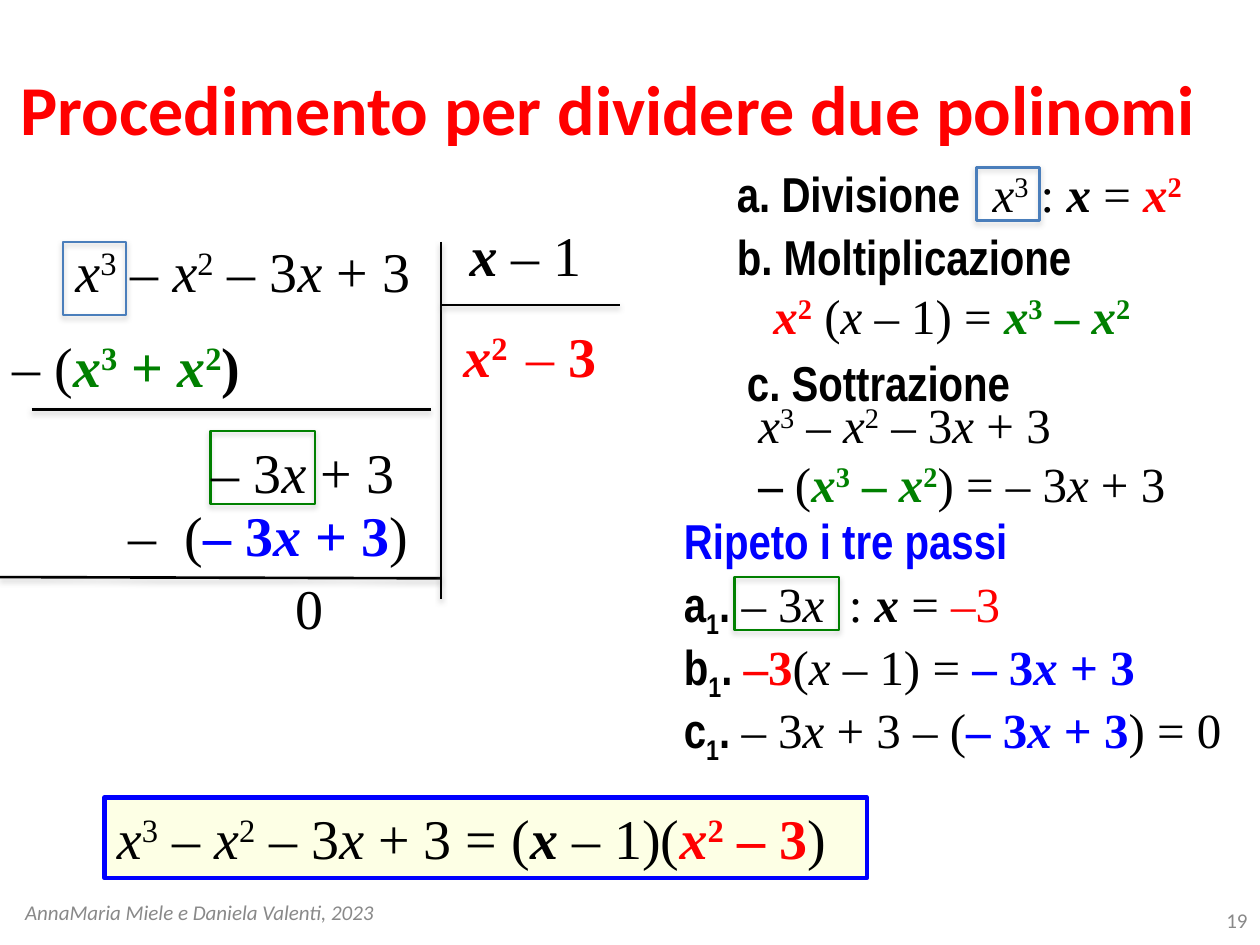
import itertools
from dataclasses import dataclass
from typing import Optional

import pptx
import pptx.dml.color
import pptx.enum.shapes
import pptx.enum.text
import pptx.oxml
import pptx.oxml.ns
import pptx.util
from pptx.util import Inches

ALIGN = pptx.enum.text.PP_ALIGN
ANCHOR = pptx.enum.text.MSO_ANCHOR


@dataclass(frozen=True)
class Theme:
    black: str = "000000"
    red: str = "FF0000"
    green: str = "008000"
    blue: str = "0000FF"
    steel: str = "4A7EBB"
    grey: str = "898989"
    cream: str = "FDFFE5"
    sans: str = "Calibri"
    narrow: str = "Arial Narrow"
    serif: str = "Times New Roman"
    title: int = 40
    division: int = 32
    step: int = 28
    footer: int = 12
    rule: float = 1.5
    border: float = 2.5


THEME = Theme()
SUPERSCRIPT, SUBSCRIPT = 30, -25


@dataclass(frozen=True)
class Run:
    text: str
    color: str = THEME.black
    bold: bool = False
    italic: bool = False
    font: str = THEME.serif
    baseline: int = 0


@dataclass(frozen=True)
class Label:
    left: float
    top: float
    width: float
    height: float
    size: int
    paragraphs: list[list[Run]]
    align: ALIGN = ALIGN.LEFT
    anchor: ANCHOR = ANCHOR.TOP
    wrap: bool = False
    last_indent: float = 0


@dataclass(frozen=True)
class Frame:
    left: float
    top: float
    width: float
    height: float
    color: str


@dataclass(frozen=True)
class Rule:
    x1: float
    y1: float
    x2: float
    y2: float


def math(text: str, color: str = THEME.black, bold: bool = False) -> list[Run]:
    """Split an expression into runs: x is italic, ^ raises the next character."""
    marked, raised = [], False
    for character in text:
        if character == "^":
            raised = True
            continue
        marked.append((character, character == "x", SUPERSCRIPT if raised else 0))
        raised = False
    return [
        Run("".join(item[0] for item in group), color, bold, italic, baseline=baseline)
        for (italic, baseline), group in itertools.groupby(marked, key=lambda item: item[1:])
    ]


def heading(text: str, color: str = THEME.black) -> list[Run]:
    return [Run(text, color, bold=True, font=THEME.narrow)]


def repeated_step(letter: str) -> list[Run]:
    """Letter with subscript 1, for the second round of the division."""
    index = Run("1", bold=True, font=THEME.narrow, baseline=SUBSCRIPT)
    return heading(letter) + [index] + heading(". ")


def step(top: float, *paragraphs: list[Run], left: float = 5.33, width: float = 4.67,
         last_indent: float = 0) -> Label:
    return Label(left, top, width, 0.57 if len(paragraphs) == 1 else 1.04,
                 THEME.step, list(paragraphs), last_indent=last_indent)


def division(left: float, top: float, width: float, runs: list[Run]) -> Label:
    return Label(left, top, width, 0.64, THEME.division, [runs])


def rgb(color: str) -> pptx.dml.color.RGBColor:
    return pptx.dml.color.RGBColor.from_string(color)


def fill_text(frame, label: Label) -> None:
    frame.word_wrap = label.wrap
    frame.vertical_anchor = label.anchor
    for index, runs in enumerate(label.paragraphs):
        paragraph = frame.paragraphs[0] if index == 0 else frame.add_paragraph()
        paragraph.alignment = label.align
        for item in runs:
            run = paragraph.add_run()
            run.text = item.text
            font = run.font
            font.name, font.size = item.font, pptx.util.Pt(label.size)
            font.bold, font.italic = item.bold, item.italic
            font.color.rgb = rgb(item.color)
            if item.baseline:
                font._element.set("baseline", str(item.baseline * 1000))
    if label.last_indent:
        properties = paragraph._p.get_or_add_pPr()
        properties.set("marL", str(Inches(label.last_indent)))


def add_label(slide, label: Label) -> None:
    box = slide.shapes.add_textbox(*map(Inches, (label.left, label.top, label.width, label.height)))
    fill_text(box.text_frame, label)


def add_shadow(shape, opacity: int) -> None:
    properties = shape._element.spPr
    for old in properties.findall(pptx.oxml.ns.qn("a:effectLst")):
        properties.remove(old)
    properties.append(pptx.oxml.parse_xml(
        f'<a:effectLst {pptx.oxml.ns.nsdecls("a")}>'
        '<a:outerShdw blurRad="39370" dist="22860" dir="5400000" rotWithShape="0">'
        f'<a:srgbClr val="808080"><a:alpha val="{opacity * 1000}"/></a:srgbClr>'
        '</a:outerShdw></a:effectLst>'))


def add_rectangle(slide, left: float, top: float, width: float, height: float,
                  color: str, line_width: float, fill: Optional[str] = None):
    shape = slide.shapes.add_shape(pptx.enum.shapes.MSO_SHAPE.RECTANGLE,
                                   *map(Inches, (left, top, width, height)))
    if fill:
        shape.fill.solid()
        shape.fill.fore_color.rgb = rgb(fill)
    else:
        shape.fill.background()
    shape.line.color.rgb = rgb(color)
    shape.line.width = pptx.util.Pt(line_width)
    shape.shadow.inherit = False
    return shape


def add_frame(slide, frame: Frame) -> None:
    add_shadow(add_rectangle(slide, frame.left, frame.top, frame.width, frame.height,
                             frame.color, THEME.rule), 35)


def add_rule(slide, rule: Rule) -> None:
    connector = slide.shapes.add_connector(pptx.enum.shapes.MSO_CONNECTOR.STRAIGHT,
                                           *map(Inches, (rule.x1, rule.y1, rule.x2, rule.y2)))
    connector.line.color.rgb = rgb(THEME.black)
    connector.line.width = pptx.util.Pt(THEME.rule)
    add_shadow(connector, 38)


def add_result(slide) -> None:
    runs = math("x^3 – x^2 – 3x + 3 = (") + math("x", bold=True) + math(" – 1)(")
    runs += math("x^2 – 3", THEME.red, True) + math(")")
    label = division(0.83, 6.33, 6.05, runs)
    shape = add_rectangle(slide, label.left, label.top, label.width, label.height,
                          THEME.blue, THEME.border, THEME.cream)
    fill_text(shape.text_frame, label)


def main() -> None:
    presentation = pptx.Presentation()
    presentation.slide_width, presentation.slide_height = Inches(10), Inches(7.5)
    slide = presentation.slides.add_slide(presentation.slide_layouts[6])
    red, green, blue = THEME.red, THEME.green, THEME.blue
    remainder = math("– 3x + 3", blue, True)
    labels = [
        Label(-0.01, 0.47, 9.67, 0.72, THEME.title,
              [[Run("Procedimento per dividere due polinomi", red, True, font=THEME.sans)]],
              ALIGN.CENTER, wrap=True),
        Label(0, 6.98, 3.17, 0.52, THEME.footer,
              [[Run("AnnaMaria Miele e Daniela Valenti, 2023", THEME.grey, italic=True, font=THEME.sans)]],
              ALIGN.CENTER, ANCHOR.MIDDLE, True),
        Label(9.33, 7.1, 0.67, 0.4, THEME.footer, [[Run("19", THEME.grey, font=THEME.sans)]],
              ALIGN.RIGHT, ANCHOR.MIDDLE, True),
        division(0.5, 1.83, 2.95, math("x^3 – x^2 – 3x + 3")),
        division(3.63, 1.7, 1.13, math("x", bold=True) + math(" – 1")),
        division(3.58, 2.5, 0.61, math("x^2", red, True)),
        division(4.08, 2.5, 0.76, math("–", red) + math(" 3", red, True)),
        division(0, 2.58, 2.07, math("– (") + math("x^3 + x^2", green, True) + math(")", bold=True)),
        division(1.58, 3.42, 1.67, math("– 3x + 3")),
        division(0.92, 3.92, 2.44, math("–  (") + remainder + math(")")),
        division(2.25, 4.5, 0.42, math("0")),
        step(1.25, heading("a. Divisione"), left=5.75, width=2),
        step(1.25, math("x^3 : ") + math("x ", bold=True) + math("= ") + math("x^2", red, True),
             left=7.78, width=1.9),
        step(1.75, heading("b. Moltiplicazione"),
             math("x^2", red, True) + math(" (x – 1) = ") + math("x^3 – x^2", green, True),
             left=5.75, width=3.63, last_indent=0.29),
        step(2.75, heading("c. Sottrazione"), left=5.83, width=2.31),
        step(3.08, math("x^3 – x^2 – 3x + 3"),
             math("–", bold=True) + math(" (") + math("x^3 – x^2", green, True) + math(") = – 3x + 3"),
             left=5.92, width=3.58),
        step(4, heading("Ripeto i tre passi", blue)),
        step(4.5, repeated_step("a") + math("– 3x  : ") + math("x", bold=True) + math(" = ") + math("–3", red)),
        step(5, repeated_step("b") + math("–3", red, True) + math("(x – 1) = ") + remainder),
        step(5.5, repeated_step("c") + math("– 3x + 3 – (") + remainder + math(") = 0")),
    ]
    frames = [
        Frame(7.75, 1.33, 0.5, 0.42, THEME.steel),
        Frame(0.5, 1.92, 0.5, 0.58, THEME.steel),
        Frame(1.67, 3.42, 0.83, 0.58, green),
        Frame(5.83, 4.58, 0.83, 0.42, green),
    ]
    rules = [
        Rule(0.25, 3.25, 3.42, 3.25),
        Rule(0, 4.58, 3.5, 4.59),
        Rule(3.5, 1.92, 3.5, 4.75),
        Rule(3.5, 2.42, 4.92, 2.42),
    ]
    for frame in frames:
        add_frame(slide, frame)
    for rule in rules:
        add_rule(slide, rule)
    add_result(slide)
    for label in labels:
        add_label(slide, label)
    presentation.save("out.pptx")


if __name__ == "__main__":
    main()
